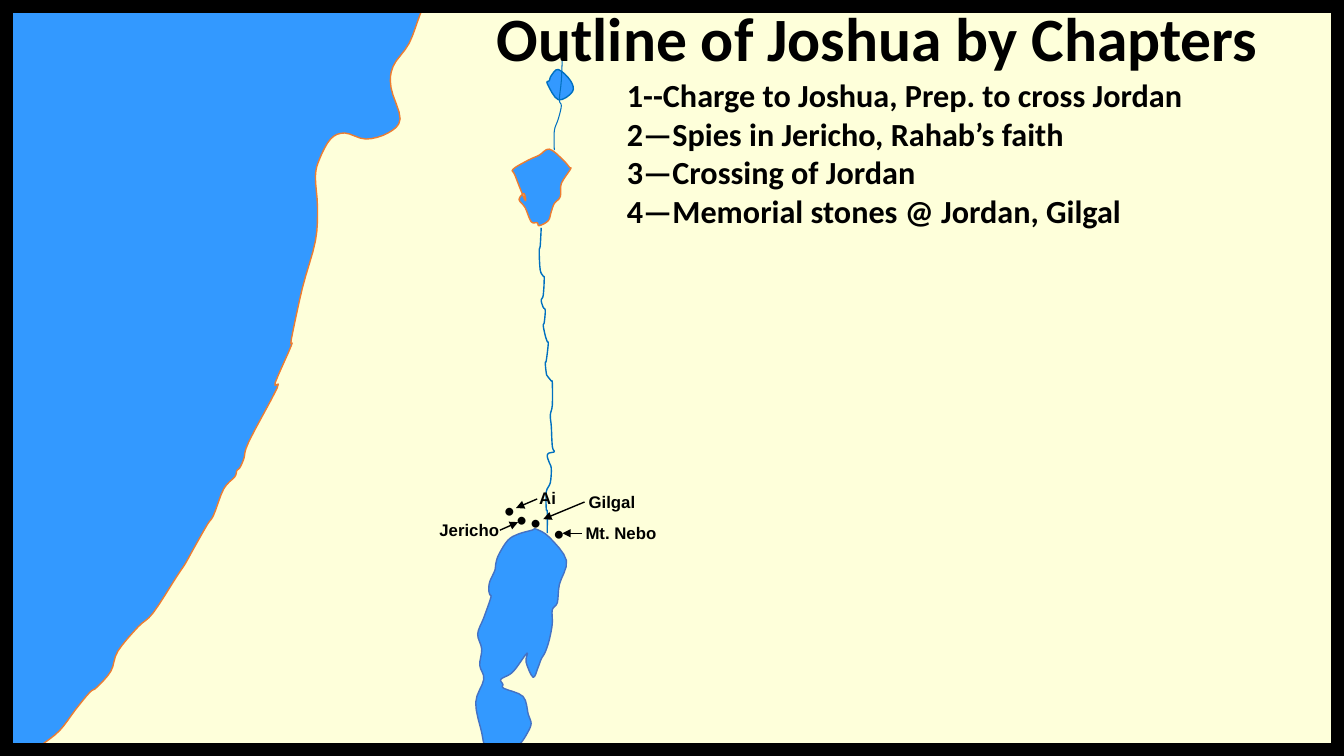
"""Build the map slide that outlines the book of Joshua by chapters."""
from dataclasses import dataclass
from typing import Any

import pptx
import pptx.dml.color
import pptx.enum.shapes
import pptx.enum.text
import pptx.oxml
import pptx.oxml.ns
import pptx.util
from pptx.util import Cm, Pt

RGBColor = pptx.dml.color.RGBColor
SAND = RGBColor(0xFE, 0xFF, 0xDA)
WATER = RGBColor(0x33, 0x99, 0xFF)
ORANGE = RGBColor(0xED, 0x7D, 0x31)
RIVER = RGBColor(0x00, 0x70, 0xC0)
LAKE_EDGE = RGBColor(0x44, 0x72, 0xC4)
BLACK = RGBColor(0, 0, 0)

Points = list[tuple[float, float]]
MAP_UNIT_CM = 0.0254
CURVE_STEPS = 4


@dataclass
class Outline:
    """A body of water in map units: a smooth curve, then straight corners."""
    curve: Points
    line: RGBColor
    width: float = 1
    closed: bool = True
    corners: tuple[tuple[float, float], ...] = ()


@dataclass
class Label:
    """A place name or dot, by its left top corner in map units."""
    text: str
    left: float
    top: float
    width: float = 30
    font: str = "Arial"
    size: float = 12
    bold: bool = True


@dataclass
class Arrow:
    """An arrow between two points in map units."""
    start: tuple[float, float]
    end: tuple[float, float]


COAST = [
    (24, 750), (32, 746), (40, 740), (59, 725), (75, 704), (89, 687), (96, 682),
    (110, 666), (117, 646), (137, 622), (152, 608), (176, 571), (184, 559),
    (194, 541), (206, 520), (212, 511), (222, 485), (233, 473), (235, 467),
    (238, 464), (242, 455), (247, 438), (275, 385), (273, 380), (289, 343),
    (289, 337), (300, 286), (313, 239), (315, 205), (313, 175), (317, 158),
    (328, 138), (342, 132), (363, 138), (385, 132), (397, 118), (388, 87),
    (390, 66), (406, 43), (417, 14), (424, 0)]
HULA = [(554, 69), (547, 75), (545, 80), (543, 83), (554, 99), (568, 91), (566, 80)]
GALILEE = [
    (521, 199), (511, 174), (509, 168), (524, 159), (535, 154), (545, 148),
    (558, 158), (565, 166), (566, 168), (557, 182), (556, 195), (550, 202),
    (547, 210), (544, 219), (535, 224), (533, 221), (527, 220), (521, 206),
    (515, 198), (520, 192)]
DEAD_SEA = [
    (528, 526), (514, 530), (504, 536), (495, 550), (492, 559), (491, 566),
    (486, 577), (485, 585), (486, 590), (487, 593), (480, 613), (474, 629),
    (478, 644), (476, 660), (480, 674), (472, 697), (478, 727), (481, 739),
    (489, 743), (496, 747), (506, 743), (516, 738), (524, 726), (527, 718),
    (525, 711), (524, 708), (519, 691), (500, 683), (499, 679), (497, 674),
    (506, 669), (512, 663), (523, 648), (522, 657), (529, 672), (534, 662),
    (537, 654), (541, 647), (545, 635), (548, 619), (548, 605), (553, 598),
    (555, 580), (562, 556), (545, 533), (532, 525)]
JORDAN = [
    (537, 226), (536, 244), (535, 249), (536, 268), (539, 274), (540, 276),
    (539, 293), (537, 298), (539, 305), (541, 308), (540, 320), (539, 323),
    (541, 333), (543, 339), (544, 341), (542, 358), (541, 360), (542, 370),
    (543, 373), (547, 378), (548, 380), (548, 402), (546, 412), (547, 423),
    (548, 443), (550, 448), (547, 449), (544, 450), (543, 453), (545, 459),
    (547, 465), (546, 479), (542, 488), (542, 505), (543, 508), (543, 529)]
UPPER_JORDAN = [
    (558, 55), (557, 80), (555, 99), (557, 105), (554, 118), (550, 130), (550, 149)]

WATERS = [
    Outline(COAST, ORANGE, corners=((6, 0), (6, 750))),
    Outline(HULA, RIVER),
    Outline(GALILEE, ORANGE),
    Outline(DEAD_SEA, LAKE_EDGE),
    Outline(JORDAN, RIVER, closed=False),
    Outline(UPPER_JORDAN, RIVER, 0.75, closed=False)]
PLACES = [
    Label("Mt. Nebo", 581, 519, 90), Label("Gilgal", 584, 488, 60),
    Label("Jericho", 436, 516, 70), Label("Ai", 535, 484)]
DOTS = [Label("•", x, y, 20, "Calibri", 16, False)
        for x, y in ((549, 515), (526, 504), (512, 501), (500, 492))]
ARROWS = [
    Arrow((577, 529), (558, 529)), Arrow((580, 498), (539, 515)),
    Arrow((533, 495), (512, 504)), Arrow((496, 526), (514, 518))]
CHAPTERS = [
    "1--Charge to Joshua, Prep. to cross Jordan",
    "2—Spies in Jericho, Rahab’s faith",
    "3—Crossing of Jordan",
    "4—Memorial stones @ Jordan, Gilgal"]


def apply(obj: Any, formats: dict[str, Any]) -> None:
    """Set each named attribute of an object."""
    for name, value in formats.items():
        setattr(obj, name, value)


def on_map(value: float) -> pptx.util.Length:
    """Turn map units into a length."""
    return Cm(value * MAP_UNIT_CM)


def smooth(points: Points, closed: bool) -> Points:
    """Run a Catmull-Rom curve through the points."""
    ring = [points[-1], *points, *points[:2]] if closed else [points[0], *points, points[-1]]
    curve = []
    for a, b, c, d in zip(ring, ring[1:], ring[2:], ring[3:]):
        for t in (step / CURVE_STEPS for step in range(CURVE_STEPS)):
            curve.append(tuple(
                (2 * q + (r - p) * t + (2 * p - 5 * q + 4 * r - s) * t ** 2
                 + (3 * q - p - 3 * r + s) * t ** 3) / 2
                for p, q, r, s in zip(a, b, c, d)))
    return curve if closed else [*curve, points[-1]]


def draw_water(shapes: Any, water: Outline) -> None:
    """Draw a sea, a lake or a river."""
    curve = smooth(water.curve, water.closed and not water.corners)
    points = [(on_map(x), on_map(y)) for x, y in [*curve, *water.corners]]
    builder = shapes.build_freeform(*points[0], scale=1.0)
    builder.add_line_segments(points[1:], close=water.closed)
    sp = builder.convert_to_shape()
    sp.shadow.inherit = False
    if water.closed:
        sp.fill.solid()
        sp.fill.fore_color.rgb = WATER
    else:
        sp.fill.background()
    sp.line.color.rgb = water.line
    sp.line.width = Pt(water.width)


def write(sp: Any, lines: list[str], font: dict[str, Any], align: Any) -> None:
    """Fill a shape with formatted lines, set tight to its top left."""
    tf = sp.text_frame
    tf.text = "\n".join(lines)
    apply(tf, dict(
        word_wrap=True, auto_size=pptx.enum.text.MSO_AUTO_SIZE.NONE,
        vertical_anchor=pptx.enum.text.MSO_ANCHOR.TOP,
        margin_left=0, margin_right=0, margin_top=0, margin_bottom=0))
    for p in tf.paragraphs:
        apply(p, dict(alignment=align, space_before=Pt(0), line_spacing=1.0))
        apply(p.runs[0].font, font)
        p.runs[0].font.color.rgb = BLACK


def draw_label(shapes: Any, label: Label) -> None:
    """Write a place name or dot on the map."""
    sp = shapes.add_textbox(*map(on_map, (label.left, label.top, label.width, 27)))
    font = dict(name=label.font, size=Pt(label.size), bold=label.bold)
    write(sp, [label.text], font, pptx.enum.text.PP_ALIGN.LEFT)


def draw_arrow(shapes: Any, arrow: Arrow) -> None:
    """Draw an arrow from a name to its dot."""
    c = shapes.add_connector(pptx.enum.shapes.MSO_CONNECTOR.STRAIGHT,
                             *map(on_map, (*arrow.start, *arrow.end)))
    c.line.color.rgb = BLACK
    c.line.width = Pt(1)
    spPr = c._element.spPr
    ln = spPr.find(pptx.oxml.ns.qn("a:ln"))
    ln.append(ln.makeelement(pptx.oxml.ns.qn("a:tailEnd"), {"type": "triangle"}))
    spPr.append(spPr.makeelement(pptx.oxml.ns.qn("a:effectLst"), {}))


def draw_texts(slide: Any) -> None:
    """Write the title and the chapter list above the map."""
    title, body = slide.placeholders
    align = pptx.enum.text.PP_ALIGN
    apply(title, dict(left=Cm(10.9), top=Cm(0), width=Cm(22.45), height=Cm(1.9)))
    apply(body, dict(left=Cm(15.8), top=Cm(1.9), width=Cm(17.3), height=Cm(4)))
    write(title, ["Outline of Joshua by Chapters"],
          dict(name="Calibri", size=Pt(44), bold=True), align.CENTER)
    write(body, CHAPTERS, dict(name="Calibri", size=Pt(23), bold=True), align.LEFT)
    for p in body.text_frame.paragraphs:
        pPr = p._p.get_or_add_pPr()
        apply_indent = {"marL": "0", "indent": "0"}
        pPr.attrib.update(apply_indent)
        pPr.append(pPr.makeelement(pptx.oxml.ns.qn("a:buNone"), {}))
    for sp in (title, body):
        slide.shapes._spTree.append(sp._element)


def main() -> None:
    """Build and save the slide."""
    prs = pptx.Presentation()
    apply(prs, dict(slide_width=Cm(33.87), slide_height=Cm(19.05)))
    slide = prs.slides.add_slide(prs.slide_layouts[1])
    slide.background.fill.solid()
    slide.background.fill.fore_color.rgb = SAND
    for water in WATERS:
        draw_water(slide.shapes, water)
    draw_texts(slide)
    for label in PLACES + DOTS:
        draw_label(slide.shapes, label)
    for arrow in ARROWS:
        draw_arrow(slide.shapes, arrow)
    frame = slide.shapes.add_shape(pptx.enum.shapes.MSO_SHAPE.RECTANGLE,
                                   0, 0, prs.slide_width, prs.slide_height)
    frame.shadow.inherit = False
    frame.fill.background()
    frame.line.color.rgb = BLACK
    frame.line.width = Pt(18)
    prs.save("out.pptx")


if __name__ == "__main__":
    main()
